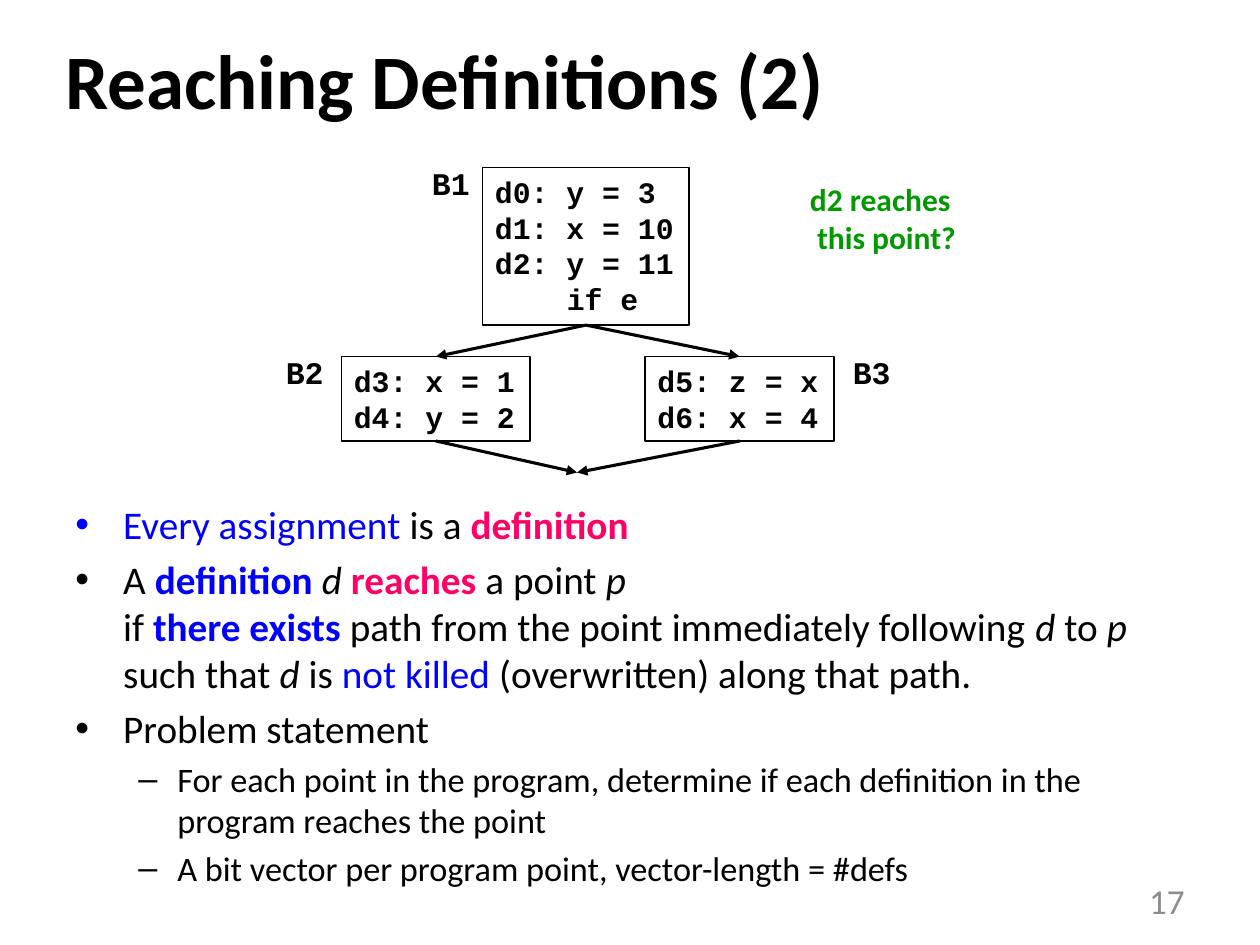
from lxml import etree
from pptx import Presentation
from pptx.dml.color import RGBColor
from pptx.enum.shapes import MSO_CONNECTOR, MSO_SHAPE
from pptx.enum.text import MSO_ANCHOR, PP_ALIGN
from pptx.oxml.ns import qn
from pptx.util import Inches, Pt

COLORS = {
    "black": "000000",
    "blue": "0000FF",
    "pink": "FF0066",
    "green": "009900",
    "gray": "8C8C8C",
}
CODE_INDENT = 0.57

BULLETS = [
    (0, [[("Every assignment ", "blue", ""), ("is a ", "black", ""),
          ("definition", "pink", "b")]]),
    (0, [[("A ", "black", ""), ("definition ", "blue", "b"), ("d ", "black", "i"),
          ("reaches", "pink", "b"), (" a point ", "black", ""), ("p ", "black", "i")],
         [("if ", "black", ""), ("there exists", "blue", "b"),
          (" path from the point immediately following ", "black", ""),
          ("d", "black", "i"), (" to ", "black", ""), ("p ", "black", "i")],
         [("such that ", "black", ""), ("d", "black", "i"), (" is ", "black", ""),
          ("not killed ", "blue", ""),
          ("(overwritten) along that path.", "black", "")]]),
    (0, [[("Problem statement", "black", "")]]),
    (1, [[("For each point in the program, determine if each definition in the "
           "program reaches the point", "black", "")]]),
    (1, [[("A bit vector per program point, vector-length = #defs", "black", "")]]),
]
LEVELS = [("•", 0.38, 0.38, 22.4, 4.5), ("–", 0.81, 0.31, 19.6, 4)]


def rgb(name):
    """Return the named colour."""
    return RGBColor.from_string(COLORS[name])


def style(font, face, size, color, bold=False):
    """Set face, size, colour and weight of a font."""
    font.name, font.size, font.bold = face, Pt(size), bold
    font.color.rgb = rgb(color)


def indent(para, left, hanging=0, bullet=None):
    """Indent a paragraph and give it an optional bullet."""
    props = para._p.get_or_add_pPr()
    props.set("marL", str(Inches(left)))
    props.set("indent", str(-Inches(hanging)))
    if bullet:
        font = etree.SubElement(props, qn("a:buFont"))
        font.set("typeface", "Arial")
        etree.SubElement(props, qn("a:buChar")).set("char", bullet)


def write_lines(frame, lines, face, size, color, bold=True):
    """Write one paragraph per line in a single style."""
    for index, line in enumerate(lines):
        para = frame.paragraphs[0] if index == 0 else frame.add_paragraph()
        para.text = line
        para.alignment = PP_ALIGN.LEFT
        style(para.font, face, size, color, bold)


def add_label(page, box, lines, face, size, color, bold=True, wrap=False):
    """Add a text box in one style and return its frame."""
    frame = page.shapes.add_textbox(*map(Inches, box)).text_frame
    frame.word_wrap = wrap
    write_lines(frame, lines, face, size, color, bold)
    return frame


def add_block(page, box, lines):
    """Add an outlined basic block of code."""
    block = page.shapes.add_shape(MSO_SHAPE.RECTANGLE, *map(Inches, box))
    block.shadow.inherit = False
    block.fill.background()
    block.line.color.rgb = rgb("black")
    block.line.width = Pt(1)
    frame = block.text_frame
    frame.word_wrap = False
    frame.vertical_anchor = MSO_ANCHOR.TOP
    write_lines(frame, lines, "Courier New", 17, "black")
    return block


def add_arrow(page, source, end, target=None):
    """Add an arrow from the bottom of a block to a point or a block's top."""
    arrow = page.shapes.add_connector(MSO_CONNECTOR.STRAIGHT, 0, 0, *map(Inches, end))
    arrow.begin_connect(source, 2)
    if target is not None:
        arrow.end_connect(target, 0)
    arrow.line.color.rgb = rgb("black")
    arrow.line.width = Pt(1.75)
    line = arrow.line._get_or_add_ln()
    etree.SubElement(line, qn("a:tailEnd")).set("type", "triangle")
    etree.SubElement(arrow._element.spPr, qn("a:effectLst"))


def add_flow_graph(page, box):
    """Draw the branching flow graph with its block names and question."""
    left, top, width, height = box
    branch_top, merge = top + 1.5, (left + 2.41, top + height)
    entry = add_block(page, (left + 1.66, top, 1.64, 1.25),
                      ["d0: y = 3", "d1: x = 10", "d2: y = 11", "if e"])
    indent(entry.text_frame.paragraphs[-1], CODE_INDENT)
    branches = [(left + 0.54, ["d3: x = 1", "d4: y = 2"]),
                (left + 2.95, ["d5: z = x", "d6: x = 4"])]
    for x, lines in branches:
        block = add_block(page, (x, branch_top, 1.5, 0.67), lines)
        add_arrow(page, entry, (x, branch_top), block)
        add_arrow(page, block, merge)
    names = [("B1", left + 1.16, top), ("B2", left, branch_top),
             ("B3", left + 4.5, branch_top)]
    for name, x, y in names:
        add_label(page, (x, y - 0.08, 0.5, 0.4), [name], "Courier New", 18, "black")
    add_label(page, (left + width - 1.37, top + 0.05, 1.37, 0.71),
              ["d2 reaches", " this point?"], "Calibri", 18, "green")


def add_bullets(page, box):
    """Write the bulleted explanation with its coloured spans."""
    frame = page.shapes.add_textbox(*map(Inches, box)).text_frame
    frame.word_wrap = True
    for index, (level, lines) in enumerate(BULLETS):
        para = frame.paragraphs[0] if index == 0 else frame.add_paragraph()
        bullet, left, hanging, size, gap = LEVELS[level]
        para.level = level
        para.space_before = Pt(gap)
        indent(para, left, hanging, bullet)
        para.font.name, para.font.size = "Calibri", Pt(size)
        for row, spans in enumerate(lines):
            if row:
                para.add_line_break()
            for text, color, look in spans:
                span = para.add_run()
                span.text = text
                style(span.font, "Calibri", size, color, look == "b")
                span.font.italic = look == "i"


def add_title(page, box):
    """Write the slide title."""
    frame = add_label(page, box, ["Reaching Definitions (2)"], "Calibri", 44,
                      "black", wrap=True)
    frame.vertical_anchor = MSO_ANCHOR.MIDDLE


def add_page_number(page, box):
    """Write the page number at the right."""
    frame = add_label(page, box, ["17"], "Calibri", 20, "gray", bold=False, wrap=True)
    frame.vertical_anchor = MSO_ANCHOR.MIDDLE
    frame.paragraphs[0].alignment = PP_ALIGN.RIGHT


def main():
    """Build and save the deck."""
    deck = Presentation()
    deck.slide_width, deck.slide_height = Inches(10), Inches(7.5)
    page = deck.slides.add_slide(deck.slide_layouts[6])
    add_title(page, (0.42, 0, 9, 1.25))
    add_flow_graph(page, (2.17, 1.33, 5.53, 2.42))
    add_bullets(page, (0.5, 3.92, 9, 3))
    add_page_number(page, (7.17, 6.95, 2.33, 0.4))
    deck.save("out.pptx")


if __name__ == "__main__":
    main()
